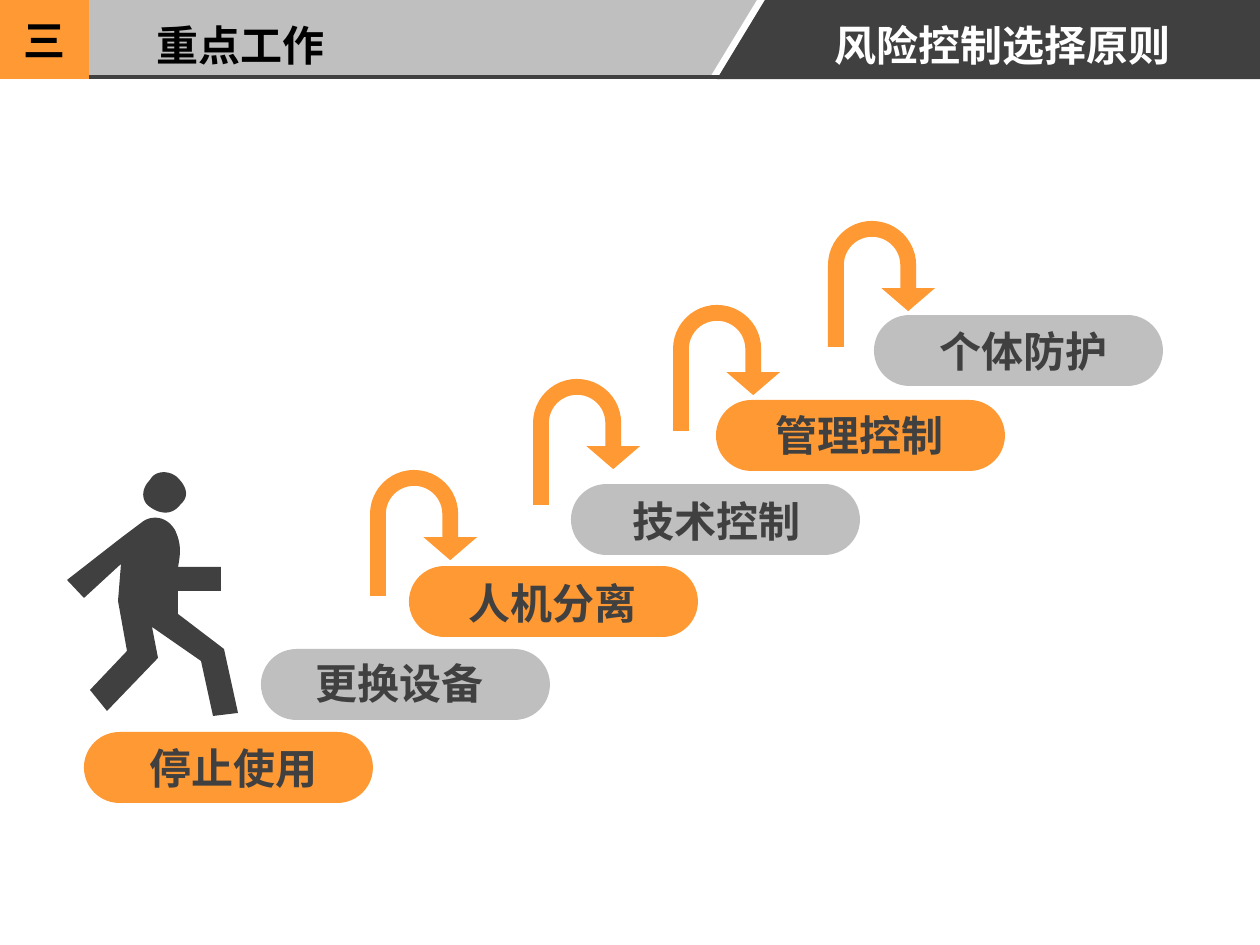
from dataclasses import dataclass
from typing import NamedTuple

from lxml import etree
from pptx import Presentation
from pptx.dml.color import RGBColor
from pptx.enum.shapes import MSO_CONNECTOR, MSO_SHAPE
from pptx.enum.text import MSO_ANCHOR, PP_ALIGN
from pptx.oxml.ns import qn
from pptx.util import Emu, Pt

RECTANGLE = MSO_SHAPE.RECTANGLE
PILL = MSO_SHAPE.ROUNDED_RECTANGLE
U_TURN = MSO_SHAPE.U_TURN_ARROW
STRAIGHT = MSO_CONNECTOR.STRAIGHT
MIDDLE = MSO_ANCHOR.MIDDLE
LEFT, CENTER = PP_ALIGN.LEFT, PP_ALIGN.CENTER

EMU_PER_PX = 914400 / 126
SLIDE_W, SLIDE_H = 1260, 945
HEADER_H = 79
PILL_W, PILL_H = 289, 71
LABEL_W, LABEL_H = 197, 64
ARROW_W, ARROW_H = 107, 126
ARROW_ADJUSTMENTS = (0.148, 0.25, 0.215, 0.432, 0.716)
CURVE_STEPS = 12


@dataclass(frozen=True)
class Theme:
    orange: str = "FF9933"
    gray: str = "BFBFBF"
    dark: str = "404040"
    white: str = "FFFFFF"
    black: str = "000000"
    font: str = "Noto Sans CJK SC"
    text_size: int = 24
    rule_width: int = 2


class Point(NamedTuple):
    x: float
    y: float


class Box(NamedTuple):
    left: int
    top: int
    width: int
    height: int


class Step(NamedTuple):
    name: str
    pill: Point
    label: Point


THEME = Theme()

STEPS = (
    Step("停止使用", Point(84, 732), Point(135, 736)),
    Step("更换设备", Point(261, 649), Point(301, 651)),
    Step("人机分离", Point(409, 566), Point(454, 571)),
    Step("技术控制", Point(571, 484), Point(618, 489)),
    Step("管理控制", Point(716, 400), Point(761, 403)),
    Step("个体防护", Point(874, 315), Point(925, 319)),
)
ARROWS = (Point(370, 470), Point(533, 379), Point(673, 305), Point(828, 221))

# Each segment holds one point for a line, or three for a cubic curve.
HEAD_START = (178, 478)
HEAD = (
    ((170, 470), (155, 470), (150, 480)),
    ((141, 489), (141, 501), (150, 507)),
    ((161, 515), (173, 515), (181, 504)),
    ((190, 496), (186, 486), HEAD_START),
)
BODY_START = (175, 530)
BODY_LINES = (
    (121, 538), (67, 580), (84, 598), (121, 564), (118, 601), (127, 651),
    (90, 690), (107, 711), (158, 658), (152, 627), (201, 661), (213, 716),
    (238, 713), (224, 649), (178, 614), (178, 591), (221, 591), (221, 567),
    (178, 567),
)
BODY = (
    ((166, 515), (150, 515), (141, 523)),
    *((point,) for point in BODY_LINES),
    ((181, 552), (181, 543), BODY_START),
)


def px(length: float) -> Emu:
    return Emu(round(length * EMU_PER_PX))


def paint(shape, color: str) -> None:
    shape.shadow.inherit = False
    shape.fill.solid()
    shape.fill.fore_color.rgb = RGBColor.from_string(color)
    shape.line.fill.background()


def add_block(slide, kind: MSO_SHAPE, box: Box, color: str, adjustments: tuple = ()) -> None:
    shape = slide.shapes.add_shape(kind, *map(px, box))
    for index, value in enumerate(adjustments):
        shape.adjustments[index] = value
    paint(shape, color)


def add_outline(slide, points: list, color: str) -> None:
    start, *rest = [(px(x), px(y)) for x, y in points]
    builder = slide.shapes.build_freeform(*start, scale=1.0)
    builder.add_line_segments(rest, close=True)
    paint(builder.convert_to_shape(), color)


def trace(start: tuple, segments: tuple) -> list[Point]:
    """Flatten lines and cubic curves into a list of points."""
    points = [Point(*start)]
    for segment in segments:
        if len(segment) == 1:
            points.append(Point(*segment[0]))
            continue
        controls = (points[-1], *segment)
        for step in range(1, CURVE_STEPS + 1):
            t = step / CURVE_STEPS
            weights = ((1 - t) ** 3, 3 * t * (1 - t) ** 2, 3 * t**2 * (1 - t), t**3)
            points.append(Point(*(
                sum(w * control[axis] for w, control in zip(weights, controls))
                for axis in (0, 1)
            )))
    return points


def add_text(slide, text: str, box: Box, *, color: str, align: PP_ALIGN = CENTER) -> None:
    frame = slide.shapes.add_textbox(*map(px, box)).text_frame
    frame.word_wrap = True
    frame.vertical_anchor = MIDDLE
    frame.margin_top = frame.margin_bottom = 0
    paragraph = frame.paragraphs[0]
    paragraph.alignment = align
    run = paragraph.add_run()
    run.text = text
    font = run.font
    font.name, font.size, font.bold = THEME.font, Pt(THEME.text_size), True
    font.color.rgb = RGBColor.from_string(color)
    east_asian = etree.SubElement(run._r.get_or_add_rPr(), qn("a:ea"))
    east_asian.set("typeface", THEME.font)


def add_rule(slide, start: Point, end: Point) -> None:
    rule = slide.shapes.add_connector(STRAIGHT, *map(px, (*start, *end)))
    rule.line.color.rgb = RGBColor.from_string(THEME.dark)
    rule.line.width = Pt(THEME.rule_width)
    etree.SubElement(rule._element.spPr, qn("a:effectLst"))


def add_header(slide) -> None:
    add_block(slide, RECTANGLE, Box(0, 0, SLIDE_W, HEADER_H), THEME.gray)
    add_block(slide, RECTANGLE, Box(0, 0, 89, HEADER_H), THEME.orange)
    add_outline(slide, [(757, 0), (765, 0), (717, HEADER_H), (709, HEADER_H)], THEME.white)
    add_outline(
        slide,
        [(765, 0), (SLIDE_W, 0), (SLIDE_W, HEADER_H), (717, HEADER_H)],
        THEME.dark,
    )
    add_rule(slide, Point(89, 77), Point(732, 77))
    add_text(slide, "风险控制选择原则", Box(746, 13, 514, LABEL_H), color=THEME.white)
    add_text(slide, "重点工作", Box(144, 13, LABEL_W, LABEL_H), color=THEME.black, align=LEFT)
    add_text(slide, "三", Box(10, 8, 68, LABEL_H), color=THEME.black)


def add_staircase(slide) -> None:
    for index, step in enumerate(STEPS):
        color = THEME.gray if index % 2 else THEME.orange
        add_block(slide, PILL, Box(*step.pill, PILL_W, PILL_H), color, (0.5,))
        add_text(slide, step.name, Box(*step.label, LABEL_W, LABEL_H), color=THEME.dark)
    for corner in ARROWS:
        add_block(slide, U_TURN, Box(*corner, ARROW_W, ARROW_H), THEME.orange, ARROW_ADJUSTMENTS)


def main() -> None:
    deck = Presentation()
    deck.slide_width, deck.slide_height = px(SLIDE_W), px(SLIDE_H)
    slide = deck.slides.add_slide(deck.slide_layouts[6])
    add_header(slide)
    add_staircase(slide)
    add_outline(slide, trace(HEAD_START, HEAD), THEME.dark)
    add_outline(slide, trace(BODY_START, BODY), THEME.dark)
    deck.save("out.pptx")


if __name__ == "__main__":
    main()
